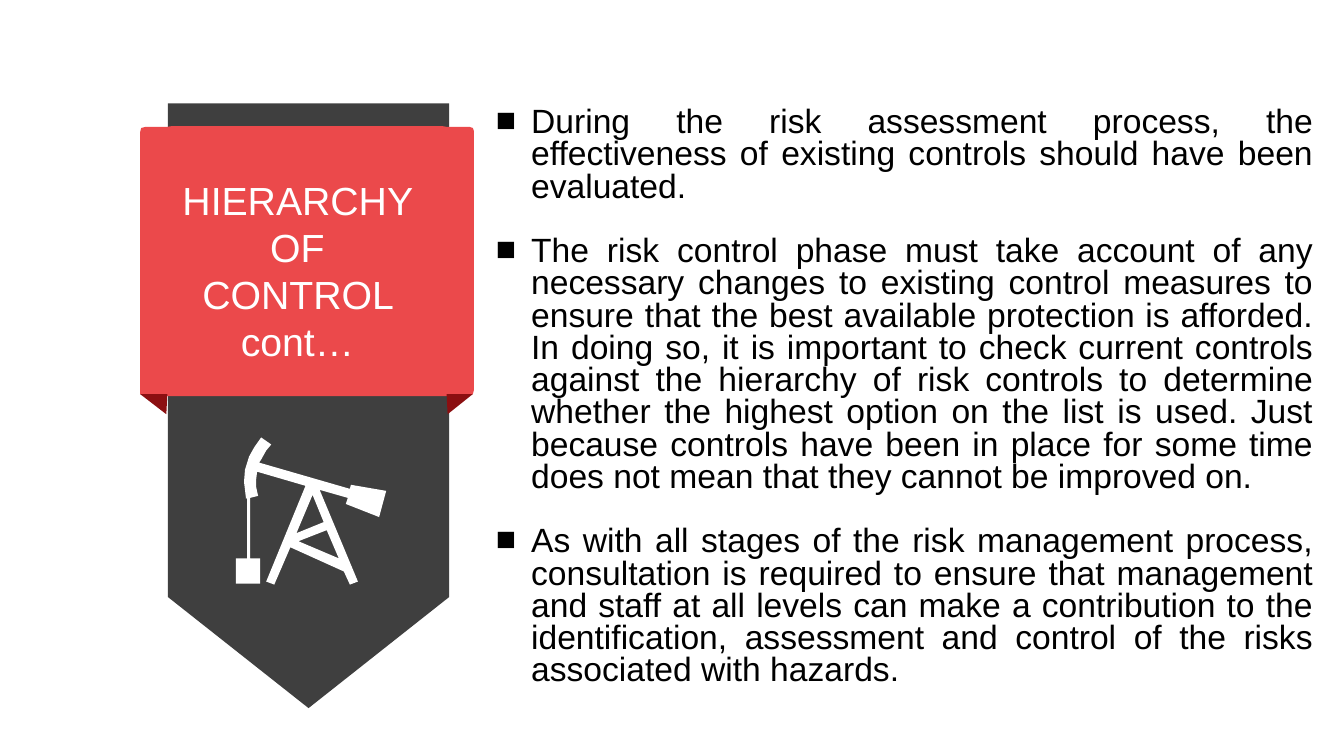
from dataclasses import dataclass

from lxml.etree import SubElement
from pptx import Presentation
from pptx.dml.color import RGBColor
from pptx.enum.shapes import MSO_SHAPE as Preset
from pptx.enum.text import MSO_AUTO_SIZE as AutoSize, PP_ALIGN as Align
from pptx.oxml.ns import qn
from pptx.shapes.autoshape import Shape
from pptx.shapes.group import GroupShape
from pptx.text.text import _Paragraph as Paragraph
from pptx.util import Inches, Pt

Point = tuple[float, float]
FONT = "Arial"
CHARCOAL, RED, DARK_RED = "3F3F3F", "EB494B", "8B0F11"
WHITE, BLACK = "FFFFFF", "000000"
BODY_SIZE = 24
LINE_SPACING = 0.8
BLANK_LINE = 23


@dataclass(frozen=True)
class Outline:
    color: str
    contours: list[list[Point]]


RIBBON = Outline(RED, [[
    (1.39, 1.31), (1.4, 1.27), (1.44, 1.26), (1.65, 1.26), (1.71, 1.25),
    (4.38, 1.25), (4.44, 1.26), (4.66, 1.26), (4.69, 1.27), (4.7, 1.3),
    (4.7, 3.87), (4.69, 3.91), (4.59, 3.93), (1.45, 3.93), (1.39, 3.91),
]])
LEFT_FOLD = Outline(DARK_RED, [[(1.39, 3.91), (1.66, 3.91), (1.65, 4.11)]])
RIGHT_FOLD = Outline(DARK_RED, [[(4.43, 3.91), (4.69, 3.91), (4.44, 4.11)]])
PUMP_JACK = Outline(WHITE, [
    [
        (2.59, 4.34), (2.69, 4.41), (2.64, 4.47), (2.59, 4.56), (2.57, 4.59),
        (3.47, 4.85), (3.48, 4.81), (3.83, 4.87), (3.76, 5.13), (3.43, 5),
        (3.45, 4.94), (3.17, 4.86), (3.55, 5.77), (3.47, 5.8), (3.41, 5.67),
        (2.88, 5.43), (2.72, 5.8), (2.64, 5.77), (3.03, 4.82), (2.55, 4.68),
        (2.54, 4.76), (2.54, 4.83), (2.56, 4.92), (2.48, 4.94), (2.48, 5.54),
        (2.58, 5.54), (2.58, 5.79), (2.34, 5.79), (2.34, 5.54), (2.45, 5.54),
        (2.45, 4.94), (2.44, 4.95), (2.43, 4.86), (2.42, 4.78), (2.43, 4.66),
        (2.47, 4.53), (2.52, 4.44),
    ],
    [(2.96, 5.37), (3.36, 5.54), (3.24, 5.26)],
    [(3.1, 4.91), (2.94, 5.29), (3.21, 5.18)],
])
STATEMENTS = [
    "During the risk assessment process, the effectiveness of existing controls "
    "should have been evaluated.",
    "The risk control phase must take account of any necessary changes to existing "
    "control measures to ensure that the best available protection is afforded. In "
    "doing so, it is important to check current controls against the hierarchy of "
    "risk controls to determine whether the highest option on the list is used. Just "
    "because controls have been in place for some time does not mean that they cannot "
    "be improved on.",
    "As with all stages of the risk management process, consultation is required to "
    "ensure that management and staff at all levels can make a contribution to the "
    "identification, assessment and control of the risks associated with hazards.",
]


def rgb(color: str) -> RGBColor:
    return RGBColor.from_string(color)


def paint(shape: Shape, color: str) -> None:
    shape.shadow.inherit = False
    shape.fill.solid()
    shape.fill.fore_color.rgb = rgb(color)
    shape.line.fill.background()


def to_emu(contour: list[Point]) -> list[tuple[int, int]]:
    return [(Inches(x), Inches(y)) for x, y in contour]


def draw_outline(group: GroupShape, outline: Outline) -> None:
    first, *holes = map(to_emu, outline.contours)
    builder = group.shapes.build_freeform(*first[0], scale=1.0)
    builder.add_line_segments(first[1:], close=True)
    for hole in holes:
        builder.move_to(*hole[0])
        builder.add_line_segments(hole[1:], close=True)
    paint(builder.convert_to_shape(), outline.color)


def add_run(paragraph: Paragraph, text: str, size: float, color: str) -> None:
    run = paragraph.add_run()
    run.text = text
    run.font.name = FONT
    run.font.size = Pt(size)
    run.font.color.rgb = rgb(color)


def add_bullet(paragraph: Paragraph) -> None:
    properties = paragraph._p.get_or_add_pPr()
    properties.set("marL", str(Inches(0.48)))
    properties.set("indent", str(Inches(-0.35)))
    SubElement(properties, qn("a:buFont"), typeface=FONT)
    SubElement(properties, qn("a:buChar"), char="■")


def draw_banner(group: GroupShape) -> None:
    plate = group.shapes.add_shape(
        Preset.PENTAGON, Inches(0.06), Inches(2.63), Inches(6), Inches(2.79))
    plate.rotation = 90
    plate.adjustments[0] = 0.395
    paint(plate, CHARCOAL)
    for outline in (RIBBON, LEFT_FOLD, RIGHT_FOLD):
        draw_outline(group, outline)
    heading = group.shapes.add_textbox(
        Inches(1.66), Inches(1.7), Inches(2.58), Inches(1.99))
    heading.text_frame.word_wrap = True
    heading.text_frame.auto_size = AutoSize.SHAPE_TO_FIT_TEXT
    paragraph = heading.text_frame.paragraphs[0]
    paragraph.alignment = Align.CENTER
    add_run(paragraph, "HIERARCHY OF CONTROL cont…", 28, WHITE)
    draw_outline(group, PUMP_JACK)


def main() -> None:
    presentation = Presentation()
    presentation.slide_width = Inches(13.33)
    presentation.slide_height = Inches(7.5)
    slide = presentation.slides.add_slide(presentation.slide_layouts[6])
    draw_banner(slide.shapes.add_group_shape())

    body = slide.shapes.add_textbox(
        Inches(4.69), Inches(1.02), Inches(8.43), Inches(5.06)).text_frame
    body.word_wrap = True
    for index, statement in enumerate(STATEMENTS):
        paragraph = body.add_paragraph() if index else body.paragraphs[0]
        add_bullet(paragraph)
        paragraph.alignment = Align.JUSTIFY
        paragraph.line_spacing = LINE_SPACING
        if index:
            paragraph.space_before = Pt(BLANK_LINE)
        add_run(paragraph, statement, BODY_SIZE, BLACK)
    presentation.save("out.pptx")


if __name__ == "__main__":
    main()
